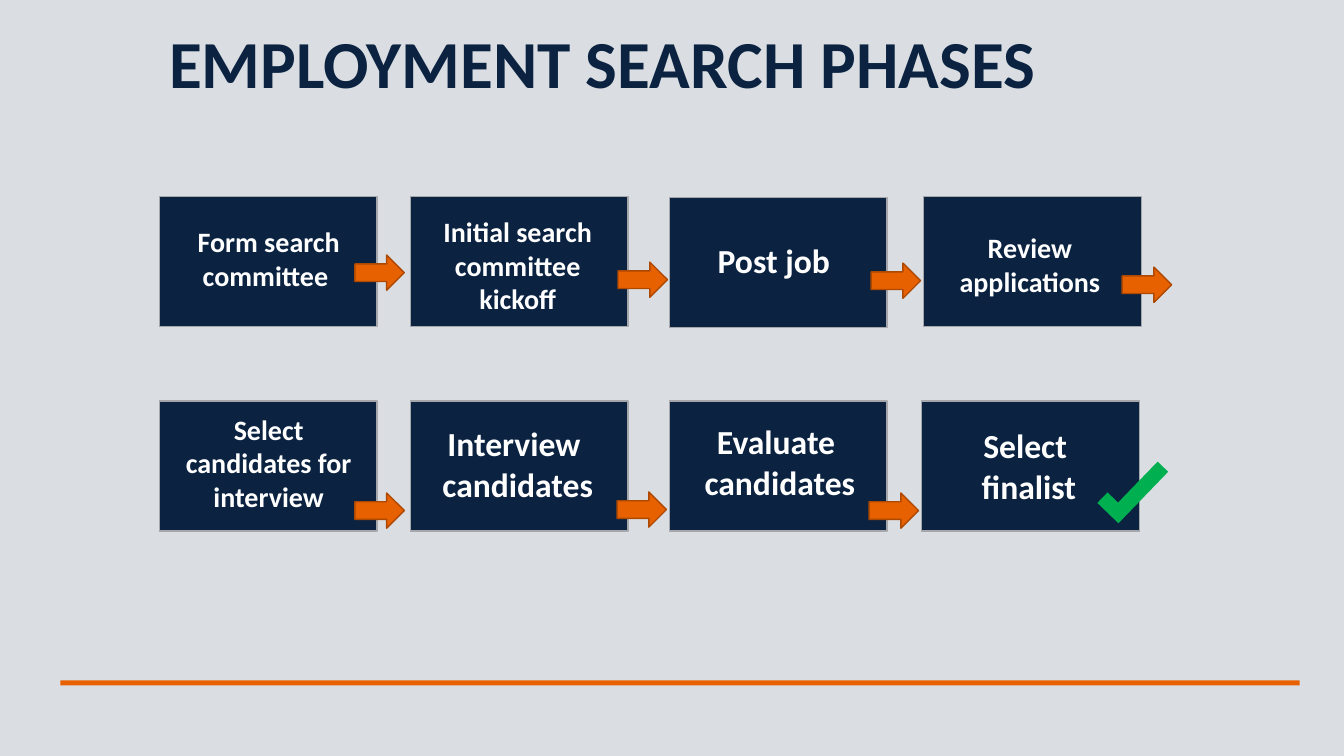
from pptx import Presentation
from pptx.dml.color import RGBColor
from pptx.enum.shapes import MSO_SHAPE
from pptx.enum.text import PP_ALIGN
from pptx.util import Inches, Pt

HUES = {
    "back": "DADEE2",
    "navy": "0B2341",
    "edge": "A5A7AA",
    "orange": "E86100",
    "rust": "AC4800",
    "green": "00B050",
    "white": "FFFFFF",
}


def add_text(text, at, size, hue="white", align=PP_ALIGN.CENTER, gap=1.0):
    box = slide.shapes.add_textbox(*map(Inches, at))
    frame = box.text_frame
    frame.word_wrap = True
    frame.text = text
    for para in frame.paragraphs:
        para.alignment = align
        para.line_spacing = gap
        para.font.name = "Calibri"
        para.font.size = Pt(size)
        para.font.bold = True
        para.font.color.rgb = RGBColor.from_string(HUES[hue])


def add_form(kind, at, fill, line=None):
    form = slide.shapes.add_shape(kind, *map(Inches, at))
    form.shadow.inherit = False
    form.fill.solid()
    form.fill.fore_color.rgb = RGBColor.from_string(HUES[fill])
    if line:
        form.line.color.rgb = RGBColor.from_string(HUES[line])
        form.line.width = Pt(1)
    else:
        form.line.fill.background()
    return form


deck = Presentation()
deck.slide_width = Inches(13.33)
deck.slide_height = Inches(7.5)
slide = deck.slides.add_slide(deck.slide_layouts[6])
slide.background.fill.solid()
slide.background.fill.fore_color.rgb = RGBColor.from_string(HUES["back"])

add_text("EMPLOYMENT SEARCH PHASES", (1.58, 0.32, 11.53, 1.32), 48,
         hue="navy", align=PP_ALIGN.LEFT, gap=0.8)
add_form(MSO_SHAPE.RECTANGLE, (0.6, 6.75, 12.29, 0.05), "orange")

cards = [
    (1.58, 1.95), (4.07, 1.95), (6.64, 1.96), (9.16, 1.95),
    (1.58, 3.98), (4.07, 3.98), (6.64, 3.98), (9.14, 3.98),
]
for left, top in cards:
    add_form(MSO_SHAPE.RECTANGLE, (left, top, 2.16, 1.29), "navy", "edge")

phases = [
    ("Form search committee ", 1.66, 2.18, 0.77, 20),
    ("Initial search committee\nkickoff", 4.13, 2.08, 1.11, 20),
    ("Post job", 6.67, 2.33, 0.5, 24),
    ("Review applications", 9.21, 2.24, 0.77, 20),
    ("Select candidates for interview", 1.66, 4.04, 1.11, 20),
    ("Interview \ncandidates", 4.13, 4.15, 0.91, 24),
    ("Evaluate \ncandidates", 6.73, 4.13, 0.91, 24),
    ("Select \nfinalist", 9.2, 4.17, 0.91, 24),
]
for text, left, top, height, size in phases:
    add_text(text, (left, top, 2.01, height), size)

arrows = [
    (3.52, 2.53), (6.13, 2.6), (8.64, 2.61), (11.13, 2.65),
    (3.52, 4.89), (6.12, 4.88), (8.62, 4.89),
]
for left, top in arrows:
    add_form(MSO_SHAPE.RIGHT_ARROW, (left, top, 0.49, 0.35), "orange", "rust")

check = add_form(MSO_SHAPE.CORNER, (10.88, 4.69, 0.71, 0.29), "green")
check.rotation = 314

deck.save("out.pptx")
